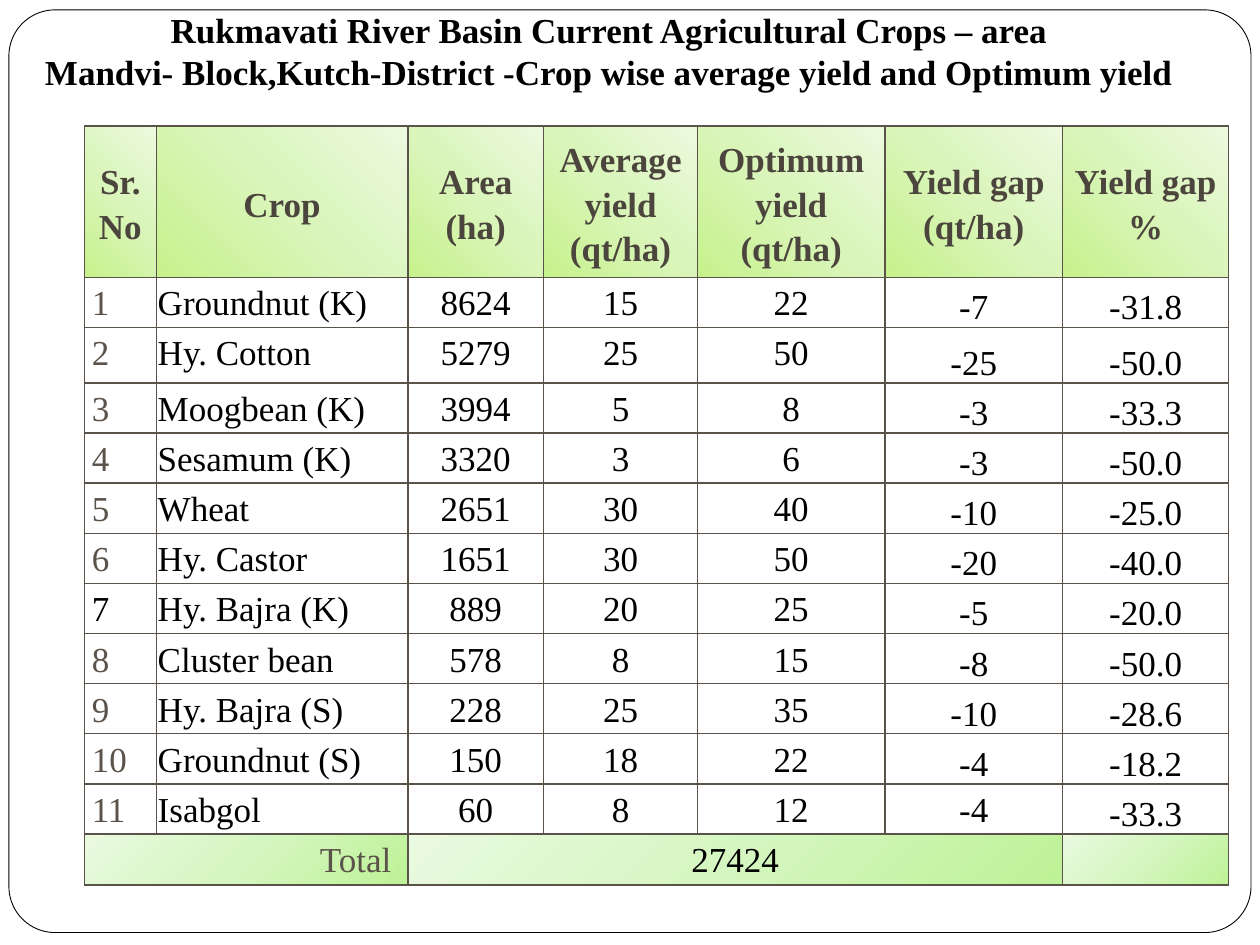
from pptx import Presentation
from pptx import util as u
from pptx.dml.color import RGBColor
from pptx.enum import shapes, text
from pptx.oxml import parse_xml
from pptx.oxml.ns import nsdecls

BLACK = RGBColor(0x00, 0x00, 0x00)
WHITE = RGBColor(0xFF, 0xFF, 0xFF)
BROWN = RGBColor(0x5B, 0x52, 0x49)
DARK_BROWN = RGBColor(0x4C, 0x45, 0x3D)
HEADER_GREENS = [RGBColor(0xC6, 0xF2, 0x8C), RGBColor(0xDA, 0xF5, 0xBA), RGBColor(0xEC, 0xF9, 0xDE)]
TOTAL_GREENS = [RGBColor(0xBE, 0xF2, 0x97), RGBColor(0xD5, 0xF6, 0xC0), RGBColor(0xEA, 0xFA, 0xE0)]
# Corner from which each radial gradient starts
BOTTOM_LEFT = 'l="0" t="100000" r="100000" b="0"'
BOTTOM_RIGHT = 'l="100000" t="100000" r="0" b="0"'

FONT = "Times New Roman"
LEFT, CENTER = text.PP_ALIGN.LEFT, text.PP_ALIGN.CENTER
RIGHT, JUSTIFY = text.PP_ALIGN.RIGHT, text.PP_ALIGN.JUSTIFY
TOP, MIDDLE, BOTTOM = text.MSO_ANCHOR.TOP, text.MSO_ANCHOR.MIDDLE, text.MSO_ANCHOR.BOTTOM

TITLE = [
    "Rukmavati River Basin Current Agricultural Crops – area",
    "Mandvi- Block,Kutch-District -Crop wise average yield and Optimum yield",
]
HEADINGS = ["Sr. No", "Crop", "Area\n(ha)", "Average yield (qt/ha)",
            "Optimum yield (qt/ha)", "Yield gap (qt/ha)", "Yield gap %"]
CROPS = [
    ("Groundnut (K)", "8624", "15", "22", "-7", "-31.8"),
    ("Hy. Cotton", "5279", "25", "50", "-25", "-50.0"),
    ("Moogbean (K)", "3994", "5", "8", "-3", "-33.3"),
    ("Sesamum (K)", "3320", "3", "6", "-3", "-50.0"),
    ("Wheat", "2651", "30", "40", "-10", "-25.0"),
    ("Hy. Castor", "1651", "30", "50", "-20", "-40.0"),
    ("Hy. Bajra (K)", "889", "20", "25", "-5", "-20.0"),
    ("Cluster bean", "578", "8", "15", "-8", "-50.0"),
    ("Hy. Bajra (S)", "228", "25", "35", "-10", "-28.6"),
    ("Groundnut (S)", "150", "18", "22", "-4", "-18.2"),
    ("Isabgol", "60", "8", "12", "-4", "-33.3"),
]
COLUMN_WIDTHS = [1.45, 5.07, 2.74, 3.1, 3.78, 3.58, 3.35]
HEADER_HEIGHT, ROW_HEIGHT, COTTON_HEIGHT = 3.05, 1.01, 1.12


def write(frame, lines, color, align, bold=False, spacing=None):
    for number, line in enumerate(lines):
        para = frame.add_paragraph() if number else frame.paragraphs[0]
        para.alignment = align
        if spacing:
            para.line_spacing = spacing
        span = para.add_run()
        span.text = line
        span.font.name = FONT
        span.font.size = u.Pt(20)
        span.font.bold = bold
        span.font.color.rgb = color


def set_gradient(cell, colors, corner):
    stops = "".join(f'<a:gs pos="{n * 50000}"><a:srgbClr val="{color}"/></a:gs>'
                    for n, color in enumerate(colors))
    cell._tc.get_or_add_tcPr().append(parse_xml(
        f'<a:gradFill {nsdecls("a")} rotWithShape="1"><a:gsLst>{stops}</a:gsLst>'
        f'<a:path path="circle"><a:fillToRect {corner}/></a:path></a:gradFill>'))


def set_borders(cell):
    properties = cell._tc.get_or_add_tcPr()
    for place, side in enumerate(("lnL", "lnR", "lnT", "lnB")):
        properties.insert(place, parse_xml(
            f'<a:{side} {nsdecls("a")} w="12700"><a:solidFill>'
            f'<a:srgbClr val="{BROWN}"/></a:solidFill></a:{side}>'))


def fill_cell(cell, words, color=BLACK, align=CENTER, anchor=TOP, side=0.15, bold=False):
    cell.margin_left = cell.margin_right = u.Cm(side)
    cell.margin_top, cell.margin_bottom = u.Cm(0.03), 0
    cell.vertical_anchor = anchor
    write(cell.text_frame, words.split("\n"), color, align, bold, 1.15)


def add_frame(page, left, top, width, height):
    frame = page.shapes.add_shape(shapes.MSO_SHAPE.ROUNDED_RECTANGLE,
                                  u.Cm(left), u.Cm(top), u.Cm(width), u.Cm(height))
    frame.adjustments[0] = 0.05
    frame.shadow.inherit = False
    frame.fill.solid()
    frame.fill.fore_color.rgb = WHITE
    frame.line.color.rgb = BLACK
    frame.line.width = u.Pt(0.5)


def add_crop_table(page, left, top):
    heights = [HEADER_HEIGHT] + [ROW_HEIGHT] * (len(CROPS) + 1)
    heights[2] = COTTON_HEIGHT
    table = page.shapes.add_table(len(heights), len(COLUMN_WIDTHS), u.Cm(left), u.Cm(top),
                                  u.Cm(sum(COLUMN_WIDTHS)), u.Cm(sum(heights))).table
    table.first_row = table.horz_banding = False
    for column, width in zip(table.columns, COLUMN_WIDTHS):
        column.width = u.Cm(width)
    for row, height in zip(table.rows, heights):
        row.height = u.Cm(height)

    # Heading row
    for column, heading in enumerate(HEADINGS):
        cell = table.cell(0, column)
        fill_cell(cell, heading, DARK_BROWN, anchor=MIDDLE, bold=True)
        set_gradient(cell, HEADER_GREENS, BOTTOM_LEFT)

    # One row per crop
    for number, (crop, *values) in enumerate(CROPS, 1):
        fill_cell(table.cell(number, 0), str(number), BLACK if number == 7 else BROWN, JUSTIFY)
        fill_cell(table.cell(number, 1), crop, align=JUSTIFY, side=0.03)
        for column, value in enumerate(values, 2):
            is_low = column == 6 or (column == 5 and number < len(CROPS))
            fill_cell(table.cell(number, column), value, anchor=BOTTOM if is_low else TOP)
        for column in range(len(COLUMN_WIDTHS)):
            table.cell(number, column).fill.background()

    # Total row
    last = len(heights) - 1
    table.cell(last, 0).merge(table.cell(last, 1))
    table.cell(last, 2).merge(table.cell(last, 5))
    fill_cell(table.cell(last, 0), "Total", BROWN, RIGHT, side=0.33)
    fill_cell(table.cell(last, 2), "27424")
    for column in range(len(COLUMN_WIDTHS)):
        set_gradient(table.cell(last, column), TOTAL_GREENS, BOTTOM_RIGHT)

    for cell in table.iter_cells():
        set_borders(cell)


def add_title(page, left, top, width, height):
    box = page.shapes.add_textbox(u.Cm(left), u.Cm(top), u.Cm(width), u.Cm(height))
    frame = box.text_frame
    frame.word_wrap = True
    frame.vertical_anchor = MIDDLE
    frame.margin_bottom = u.Cm(0.84)
    write(frame, TITLE, BLACK, CENTER, bold=True)


def main():
    deck = Presentation()
    deck.slide_width, deck.slide_height = u.Cm(25.4), u.Cm(19.05)
    page = deck.slides.add_slide(deck.slide_layouts[6])
    add_frame(page, 0.18, 0.2, 25.04, 18.6)
    add_crop_table(page, 1.7, 2.54)
    add_title(page, 0, 0, 24.56, 2.74)
    deck.save("out.pptx")


if __name__ == "__main__":
    main()
